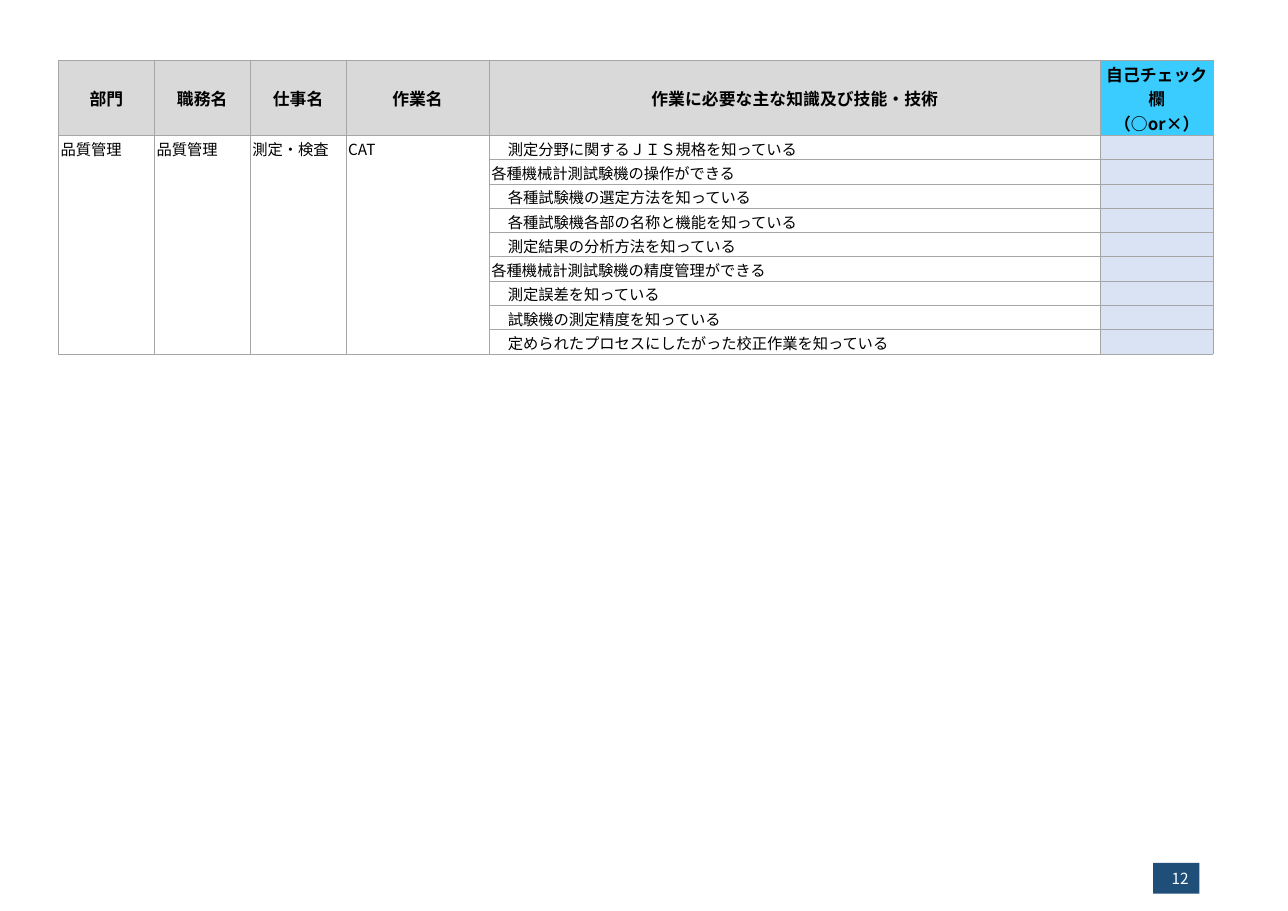
import pptx
import pptx.dml.color
import pptx.enum.shapes
import pptx.enum.text
import pptx.oxml.ns
import pptx.util
from lxml import etree

Cm, Pt = pptx.util.Cm, pptx.util.Pt
ALIGN = pptx.enum.text.PP_ALIGN
MIDDLE = pptx.enum.text.MSO_ANCHOR.MIDDLE
qn = pptx.oxml.ns.qn

FONT = "Noto Sans CJK JP"
HEADERS = ["部門", "職務名", "仕事名", "作業名",
           "作業に必要な主な知識及び技能・技術", "自己チェック欄\v（○or×）"]
WIDTHS = [2.21, 2.21, 2.21, 3.3, 14.1, 2.59]
CATEGORIES = ["品質管理", "品質管理", "測定・検査", "CAT"]
# Each skill with its indent level
SKILLS = [
    ("測定分野に関するＪＩＳ規格を知っている", 1),
    ("各種機械計測試験機の操作ができる", 0),
    ("各種試験機の選定方法を知っている", 1),
    ("各種試験機各部の名称と機能を知っている", 1),
    ("測定結果の分析方法を知っている", 1),
    ("各種機械計測試験機の精度管理ができる", 0),
    ("測定誤差を知っている", 1),
    ("試験機の測定精度を知っている", 1),
    ("定められたプロセスにしたがった校正作業を知っている", 1),
]


def rgb(color):
    return pptx.dml.color.RGBColor.from_string(color)


def set_text(tf, text, size, color, bold=False, align=ALIGN.LEFT):
    tf.text = text
    p = tf.paragraphs[0]
    p.alignment = align
    for r in p.runs:
        r.font.size, r.font.bold, r.font.name = Pt(size), bold, FONT
        r.font.color.rgb = rgb(color)
        etree.SubElement(r._r.get_or_add_rPr(), qn("a:ea"), typeface=FONT)
    # Keeps empty cells at the same line height
    etree.SubElement(p._p, qn("a:endParaRPr"), sz=str(size * 100))
    return p


def set_borders(cell, color, width):
    tcPr = cell._tc.get_or_add_tcPr()
    for side in ("lnL", "lnR", "lnT", "lnB"):
        ln = etree.SubElement(tcPr, qn("a:" + side), w=str(Pt(width)))
        fill = etree.SubElement(ln, qn("a:solidFill"))
        etree.SubElement(fill, qn("a:srgbClr"), val=color)


def format_cell(cell, text, fill, header=False):
    set_borders(cell, "A6A6A6", 0.5)
    cell.fill.solid()
    cell.fill.fore_color.rgb = rgb(fill)
    cell.margin_left = cell.margin_top = Cm(0.03 if header else 0.05)
    cell.margin_right, cell.margin_bottom = Cm(0.03), 0
    if header:
        cell.vertical_anchor = MIDDLE
        return set_text(cell.text_frame, text, 11, "000000", True, ALIGN.CENTER)
    return set_text(cell.text_frame, text, 10, "000000")


def add_skill_table(s):
    rows = len(SKILLS) + 1
    frame = s.shapes.add_table(rows, len(HEADERS), Cm(1.35), Cm(1.39),
                               Cm(sum(WIDTHS)), Cm(6.77))
    table = frame.table
    table.first_row = table.horz_banding = False
    for column, width in zip(table.columns, WIDTHS):
        column.width = Cm(width)
    for i, row in enumerate(table.rows):
        row.height = Cm(0.56 if i else 1.73)

    # Header row
    last = len(HEADERS) - 1
    for c, text in enumerate(HEADERS):
        fill = "3BCCFF" if c == last else "D9D9D9"
        format_cell(table.cell(0, c), text, fill, header=True)

    # Skills and check column
    for i, (skill, level) in enumerate(SKILLS, 1):
        categories = CATEGORIES if i == 1 else [""] * len(CATEGORIES)
        for c, text in enumerate(categories + [skill, ""]):
            fill = "DAE3F3" if c == last else "FFFFFF"
            p = format_cell(table.cell(i, c), text, fill)
            if text == skill and level:
                p._p.get_or_add_pPr().set("marL", str(Cm(0.38)))

    # Category cells span all skills
    for c in range(len(CATEGORIES)):
        table.cell(1, c).merge(table.cell(rows - 1, c))


def add_page_number(s, number):
    sp = s.shapes.add_shape(pptx.enum.shapes.MSO_SHAPE.RECTANGLE,
                            Cm(26.59), Cm(19.89), Cm(1.07), Cm(0.71))
    sp.shadow.inherit = False
    sp.fill.solid()
    sp.fill.fore_color.rgb = rgb("1F4E79")
    sp.line.fill.background()
    sp.text_frame.vertical_anchor = MIDDLE
    set_text(sp.text_frame, number, 10, "FFFFFF", align=ALIGN.RIGHT)


def main():
    prs = pptx.Presentation()
    prs.slide_width, prs.slide_height = Cm(29.7), Cm(21)
    s = prs.slides.add_slide(prs.slide_layouts[6])
    add_skill_table(s)
    add_page_number(s, "12")
    prs.save("out.pptx")


if __name__ == "__main__":
    main()
